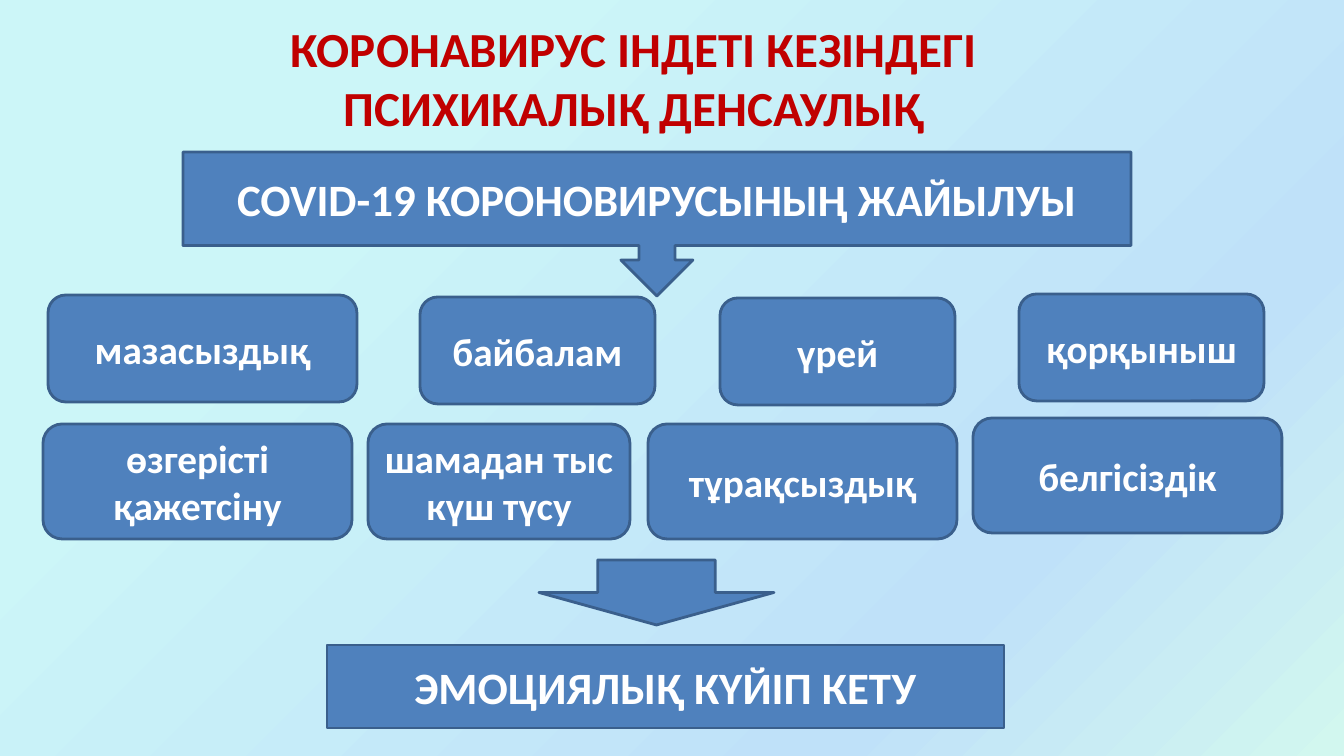
import copy
import pptx
import pptx.util
import pptx.dml.color
import pptx.enum.shapes
import pptx.enum.text
import pptx.oxml.ns

RGB = pptx.dml.color.RGBColor
KIND = pptx.enum.shapes.MSO_SHAPE
RED = RGB(0xC0, 0x00, 0x00)
BLUE = RGB(0x4F, 0x81, 0xBD)
NAVY = RGB(0x3A, 0x5F, 0x8C)
WHITE = RGB(0xFF, 0xFF, 0xFF)
AQUA = RGB(0xCC, 0xF6, 0xF8)
SKY = RGB(0xBF, 0xE1, 0xF9)
MINT = RGB(0xD2, 0xF7, 0xEF)

WIDE, HIGH = 1344, 756
SCALE = 12192000 / WIDE
FONT = "Calibri"

TITLE = ("КОРОНАВИРУС ІНДЕТІ КЕЗІНДЕГІ ПСИХИКАЛЫҚ ДЕНСАУЛЫҚ", (137, 19, 994, 117))
CAUSE = ("COVID-19 КОРОНОВИРУСЫНЫҢ ЖАЙЫЛУЫ", (183, 152, 948, 144))
RESULT = ("ЭМОЦИЯЛЫҚ КҮЙІП КЕТУ", (327, 645, 677, 83))
ARROW = (539, 560, 235, 65)
ROWS = [
    (107, [
        ("мазасыздық", 48, 295, 309),
        ("байбалам", 420, 297, 235),
        ("үрей", 720, 298, 235),
        ("қорқыныш", 1019, 294, 245),
    ]),
    (115, [
        ("өзгерісті қажетсіну", 43, 424, 309),
        ("шамадан тыс күш түсу", 368, 424, 262),
        ("тұрақсыздық", 648, 424, 309),
        ("белгісіздік", 973, 418, 309),
    ]),
]
STOPS = [(0.25, AQUA), (0.75, SKY), (1.0, MINT)]


def px(num):
    return pptx.util.Emu(round(num * SCALE))


def write(shape, text, size, color):
    frame = shape.text_frame
    frame.word_wrap = True
    frame.vertical_anchor = pptx.enum.text.MSO_ANCHOR.MIDDLE
    para = frame.paragraphs[0]
    para.alignment = pptx.enum.text.PP_ALIGN.CENTER
    run = para.add_run()
    run.text = text
    run.font.name = FONT
    run.font.size = pptx.util.Pt(size)
    run.font.bold = True
    run.font.color.rgb = color


def block(slide, kind, area, text="", size=28):
    shape = slide.shapes.add_shape(kind, *map(px, area))
    shape.shadow.inherit = False
    shape.fill.solid()
    shape.fill.fore_color.rgb = BLUE
    shape.line.color.rgb = NAVY
    shape.line.width = pptx.util.Pt(2)
    if text:
        write(shape, text, size, WHITE)


def paint(slide):
    fill = slide.background.fill
    fill.gradient()
    fill.gradient_angle = 315
    group = slide.element.find(".//" + pptx.oxml.ns.qn("a:gsLst"))
    group.append(copy.deepcopy(group[-1]))
    for stop, (place, color) in zip(fill.gradient_stops, STOPS):
        stop.position = place
        stop.color.rgb = color


def main():
    deck = pptx.Presentation()
    deck.slide_width, deck.slide_height = px(WIDE), px(HIGH)
    slide = deck.slides.add_slide(deck.slide_layouts[6])
    paint(slide)

    text, area = TITLE
    write(slide.shapes.add_textbox(*map(px, area)), text, 35, RED)

    text, area = CAUSE
    block(slide, KIND.DOWN_ARROW_CALLOUT, area, text, 32)
    for high, tiles in ROWS:
        for text, left, top, wide in tiles:
            block(slide, KIND.ROUNDED_RECTANGLE, (left, top, wide, high), text)
    text, area = RESULT
    block(slide, KIND.RECTANGLE, area, text, 32)
    block(slide, KIND.DOWN_ARROW, ARROW)

    deck.save("out.pptx")


if __name__ == "__main__":
    main()
